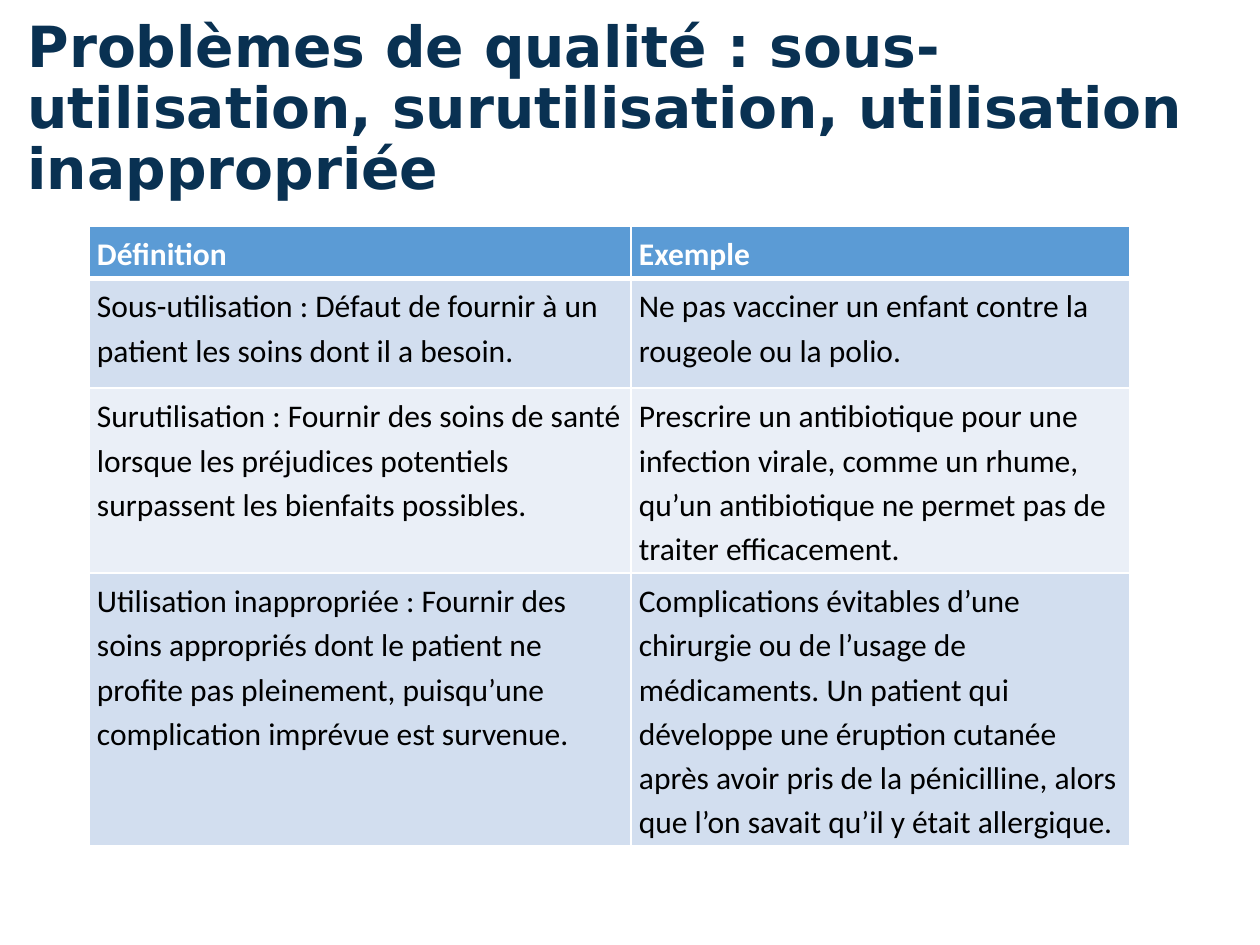
from dataclasses import dataclass

from lxml.etree import SubElement
from pptx import Presentation
from pptx.dml.color import RGBColor
from pptx.enum.text import MSO_ANCHOR as Anchor, PP_ALIGN as Align
from pptx.oxml.ns import qn
from pptx.util import Pt

PX = 914400 // 126


@dataclass
class Theme:
    title_font: str = "DejaVu Sans"
    body_font: str = "Calibri"
    title_size: float = 32.4
    body_size: int = 18
    title: str = "093152"
    header_text: str = "FFFFFF"
    body_text: str = "000000"
    header_fill: str = "5B9BD5"
    bands: tuple = ("D2DEEF", "EAEFF7")
    border: str = "FFFFFF"


theme = Theme()


def style_paragraph(paragraph, name, size, color, bold, spacing):
    paragraph.alignment = Align.LEFT
    paragraph.line_spacing = spacing
    paragraph.space_before = Pt(0)
    paragraph.font.name = name
    paragraph.font.size = Pt(size)
    paragraph.font.bold = bold
    paragraph.font.color.rgb = RGBColor.from_string(color)


def set_borders(cell, bottom_width):
    properties = cell._tc.get_or_add_tcPr()
    sides = (("a:lnL", 1), ("a:lnR", 1), ("a:lnT", 1), ("a:lnB", bottom_width))
    for index, (tag, width) in enumerate(sides):
        line = SubElement(properties, qn(tag), w=str(Pt(width)))
        fill = SubElement(line, qn("a:solidFill"))
        SubElement(fill, qn("a:srgbClr"), val=theme.border)
        properties.insert(index, line)  # borders come before the fill


presentation = Presentation()
presentation.slide_width = 1260 * PX
presentation.slide_height = 945 * PX
slide = presentation.slides.add_slide(presentation.slide_layouts[5])

# Title
title = slide.shapes.title
title.left, title.top, title.width, title.height = (
    value * PX for value in (15, 98, 1221, 185))
frame = title.text_frame
frame.word_wrap = True
frame.vertical_anchor = Anchor.BOTTOM
frame.margin_bottom = 81 * PX
frame.text = "Problèmes de qualité : sous-utilisation, surutilisation, utilisation inappropriée"
style_paragraph(frame.paragraphs[0], theme.title_font, theme.title_size,
                theme.title, True, 0.9)

# Table of definitions and examples
rows = [
    ("Définition", "Exemple"),
    ("Sous-utilisation : Défaut de fournir à un patient les soins dont il a besoin.",
     "Ne pas vacciner un enfant contre la rougeole ou la polio."),
    ("Surutilisation : Fournir des soins de santé lorsque les préjudices potentiels "
     "surpassent les bienfaits possibles.",
     "Prescrire un antibiotique pour une infection virale, comme un rhume, "
     "qu’un antibiotique ne permet pas de traiter efficacement."),
    ("Utilisation inappropriée : Fournir des soins appropriés dont le patient ne "
     "profite pas pleinement, puisqu’une complication imprévue est survenue.",
     "Complications évitables d’une chirurgie ou de l’usage de médicaments. "
     "Un patient qui développe une éruption cutanée après avoir pris de la "
     "pénicilline, alors que l’on savait qu’il y était allergique."),
]
column_widths = (542, 499)
row_heights = (42, 110, 178, 246)
table = slide.shapes.add_table(
    len(rows), len(column_widths), 89 * PX, 226 * PX,
    sum(column_widths) * PX, sum(row_heights) * PX).table
for column, width in zip(table.columns, column_widths):
    column.width = width * PX

for row_index, (row, height, texts) in enumerate(zip(table.rows, row_heights, rows)):
    row.height = height * PX
    header = row_index == 0
    fill = theme.header_fill if header else theme.bands[(row_index - 1) % 2]
    color = theme.header_text if header else theme.body_text
    for cell, text in zip(row.cells, texts):
        cell.text = text
        cell.margin_left = cell.margin_right = 8 * PX
        cell.margin_top = cell.margin_bottom = 4 * PX
        cell.vertical_anchor = Anchor.TOP
        cell.fill.solid()
        cell.fill.fore_color.rgb = RGBColor.from_string(fill)
        set_borders(cell, 3 if header else 1)
        style_paragraph(cell.text_frame.paragraphs[0], theme.body_font,
                        theme.body_size, color, header, 1.15)

presentation.save("out.pptx")
